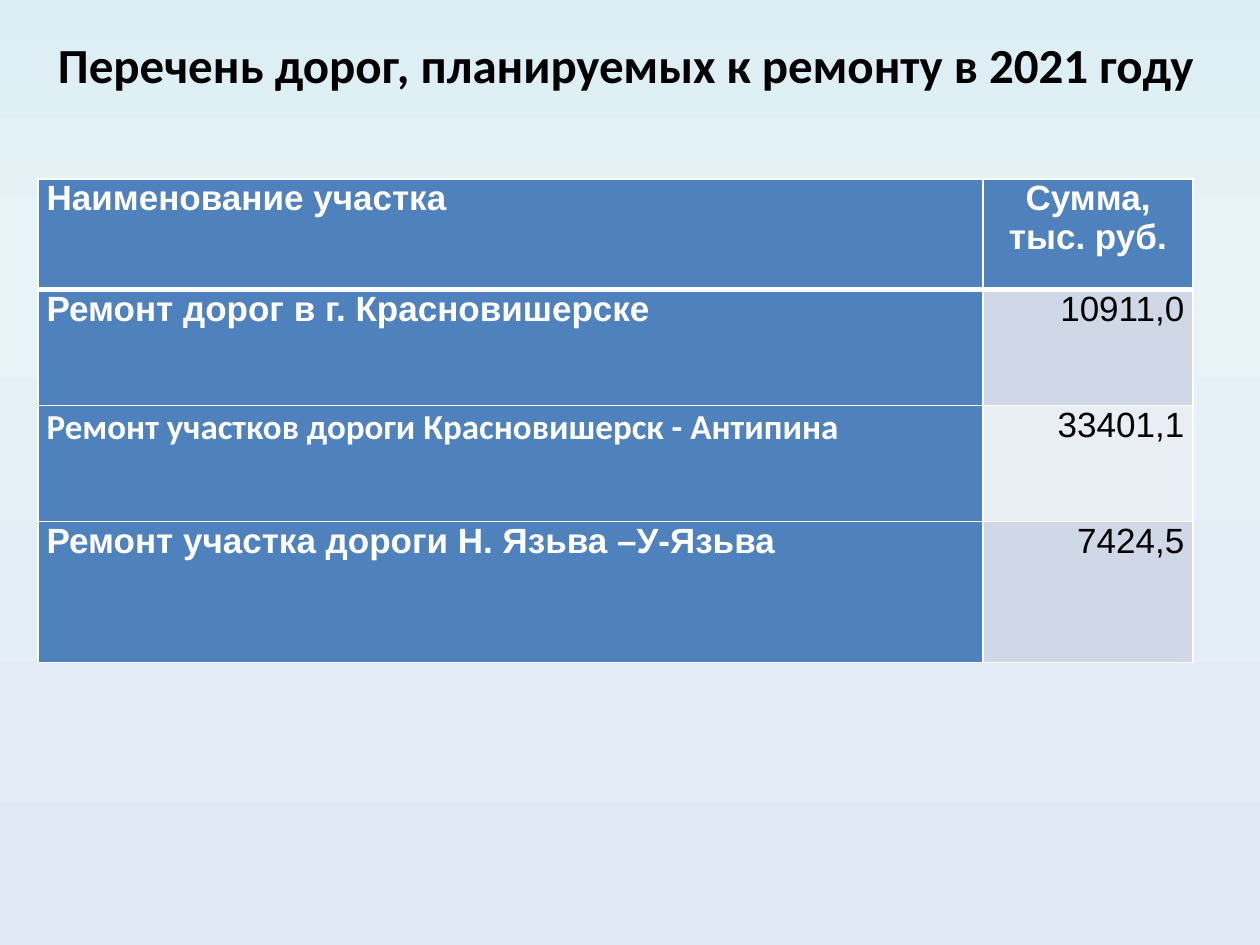
from dataclasses import dataclass

from lxml import etree
from pptx import Presentation
from pptx.dml.color import RGBColor
from pptx.enum.text import MSO_ANCHOR, MSO_AUTO_SIZE, PP_ALIGN
from pptx.oxml.ns import qn
from pptx.util import Inches, Pt

CENTER, RIGHT, JUSTIFY = PP_ALIGN.CENTER, PP_ALIGN.RIGHT, PP_ALIGN.JUSTIFY
MIDDLE = MSO_ANCHOR.MIDDLE
NO_AUTOFIT = MSO_AUTO_SIZE.NONE
TITLE_ONLY = 5


@dataclass(frozen=True)
class Theme:
    black: str = "000000"
    white: str = "FFFFFF"
    accent: str = "4F81BD"
    bands: tuple = ("D0D8E8", "E9EDF4")
    background: tuple = ((0, "DBEEF4"), (25, "E6F3F7"), (100, "E1E8F5"))
    heading_font: str = "Calibri"
    body_font: str = "Arial"
    title_size: int = 28
    table_size: int = 20
    thin: int = 1
    thick: int = 3


THEME = Theme()
TITLE = "Перечень дорог, планируемых к ремонту в 2021 году"
HEADER = ("Наименование участка", "Сумма, тыс. руб.")
ROADS = (
    ("Ремонт дорог в г. Красновишерске", "10911,0", THEME.body_font),
    ("Ремонт участков дороги Красновишерск - Антипина", "33401,1", THEME.heading_font),
    ("Ремонт участка дороги Н. Язьва –У-Язьва", "7424,5", THEME.body_font),
)
COLUMN_WIDTHS = (7.5, 1.67)
ROW_HEIGHTS = (0.88, 0.92, 0.92, 1.12)


def set_background(page):
    fill = page.background.fill
    fill.gradient()
    fill.gradient_angle = 270
    stops = next(page.element.iter(qn("a:gsLst")))
    for stop in list(stops):
        stops.remove(stop)
    for percent, color in THEME.background:
        stop = etree.SubElement(stops, qn("a:gs"), pos=str(percent * 1000))
        etree.SubElement(stop, qn("a:srgbClr"), val=color)


def write(frame, text, font, size, color, bold, align):
    para = frame.paragraphs[0]
    para.alignment = align
    span = para.add_run()
    span.text = text
    span.font.name = font
    span.font.size = Pt(size)
    span.font.bold = bold
    span.font.color.rgb = RGBColor.from_string(color)


def add_title(page):
    box = page.shapes.title
    box.left, box.top = Inches(0.28), Inches(0.17)
    box.width, box.height = Inches(9.37), Inches(0.67)
    frame = box.text_frame
    frame.word_wrap = True
    frame.auto_size = NO_AUTOFIT
    frame.vertical_anchor = MIDDLE
    write(frame, TITLE, THEME.heading_font, THEME.title_size, THEME.black, True, CENTER)


def set_borders(cell, top, bottom):
    properties = cell._tc.get_or_add_tcPr()
    sides = (("L", THEME.thin), ("R", THEME.thin), ("T", top), ("B", bottom))
    for index, (side, width) in enumerate(sides):
        line = etree.Element(qn(f"a:ln{side}"), w=str(Pt(width)))
        fill = etree.SubElement(line, qn("a:solidFill"))
        etree.SubElement(fill, qn("a:srgbClr"), val=THEME.white)
        properties.insert(index, line)


def fill_cell(cell, row, text, fill, align, font=THEME.body_font, color=THEME.white, bold=True):
    cell.margin_left = cell.margin_right = Inches(0.07)
    cell.margin_top = cell.margin_bottom = 0
    cell.fill.solid()
    cell.fill.fore_color.rgb = RGBColor.from_string(fill)
    write(cell.text_frame, text, font, THEME.table_size, color, bold, align)
    top = THEME.thick if row == 1 else THEME.thin
    bottom = THEME.thick if row == 0 else THEME.thin
    set_borders(cell, top, bottom)


def add_road_table(page):
    table = page.shapes.add_table(
        len(ROW_HEIGHTS), len(COLUMN_WIDTHS), Inches(0.3), Inches(1.42),
        Inches(sum(COLUMN_WIDTHS)), Inches(sum(ROW_HEIGHTS)),
    ).table
    for column, width in zip(table.columns, COLUMN_WIDTHS):
        column.width = Inches(width)
    for row, height in zip(table.rows, ROW_HEIGHTS):
        row.height = Inches(height)
    for column, (text, align) in enumerate(zip(HEADER, (JUSTIFY, CENTER))):
        fill_cell(table.cell(0, column), 0, text, THEME.accent, align)
    for row, (road, amount, font) in enumerate(ROADS, start=1):
        band = THEME.bands[(row - 1) % len(THEME.bands)]
        fill_cell(table.cell(row, 0), row, road, THEME.accent, JUSTIFY, font=font)
        fill_cell(table.cell(row, 1), row, amount, band, RIGHT, color=THEME.black, bold=False)


def main():
    deck = Presentation()
    deck.slide_width, deck.slide_height = Inches(10), Inches(7.5)
    page = deck.slides.add_slide(deck.slide_layouts[TITLE_ONLY])
    set_background(page)
    add_title(page)
    add_road_table(page)
    deck.save("out.pptx")


if __name__ == "__main__":
    main()
